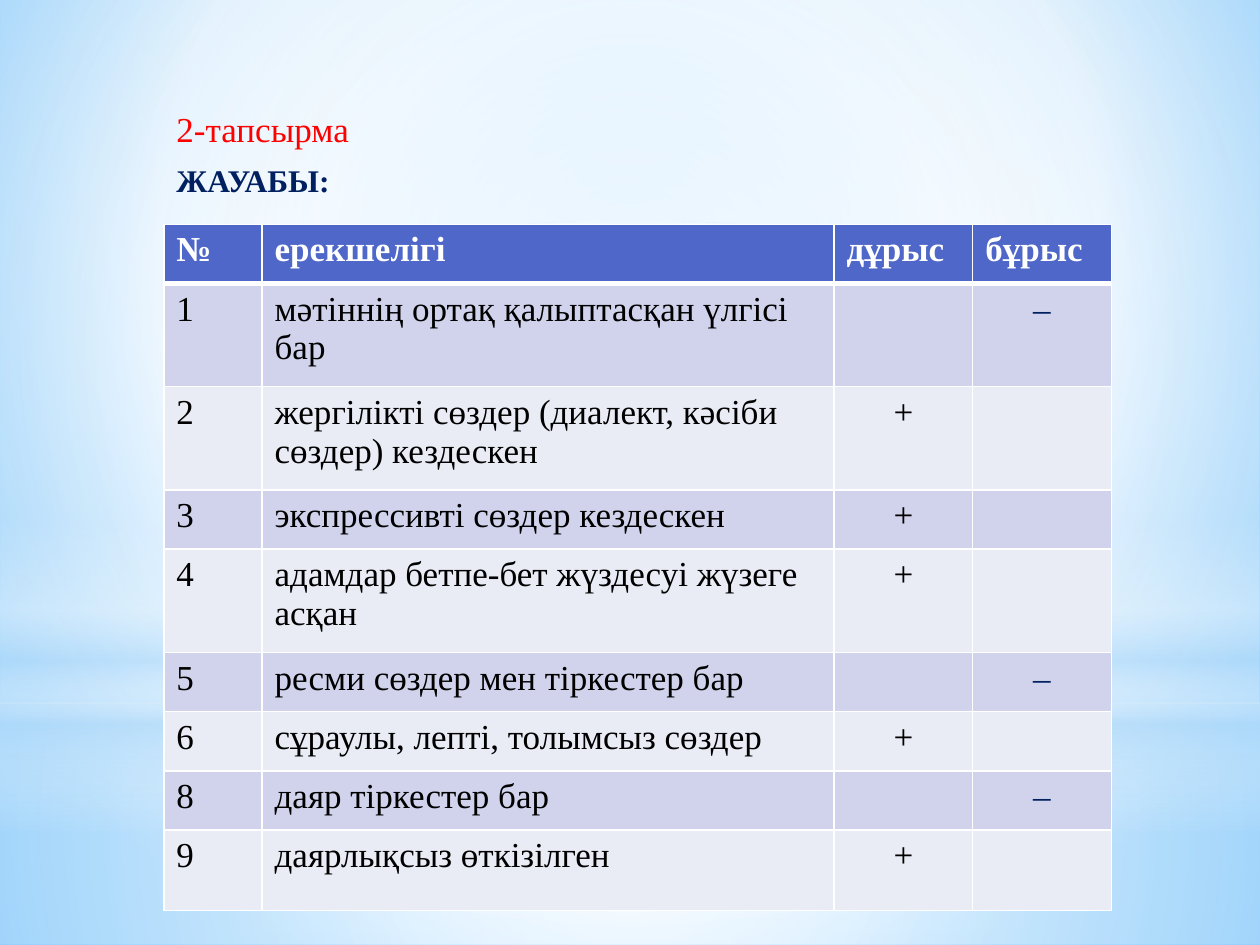
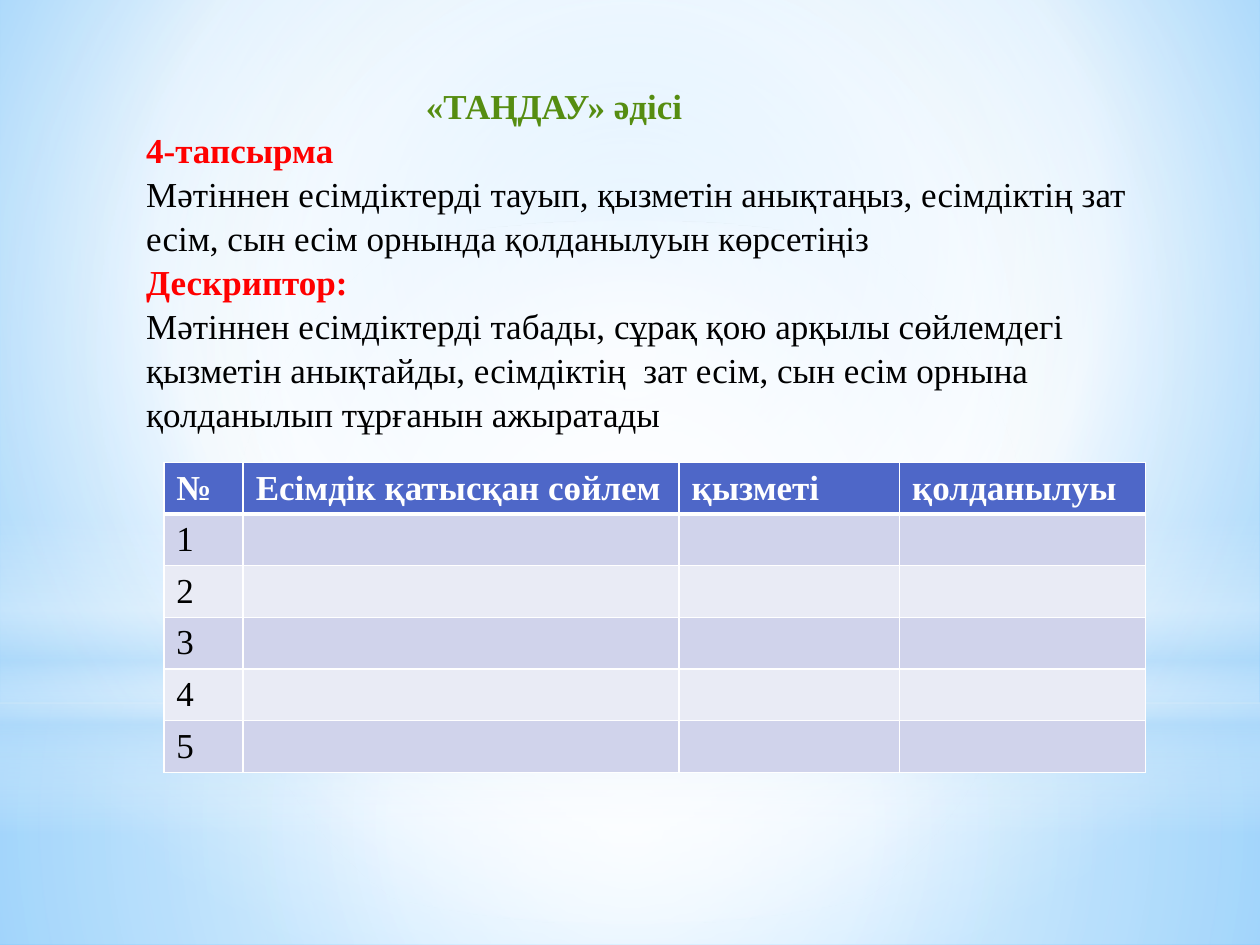
from dataclasses import dataclass

from pptx import Presentation
from pptx.dml.color import RGBColor
from pptx.enum.shapes import MSO_SHAPE
from pptx.enum.text import MSO_ANCHOR, MSO_AUTO_SIZE, PP_ALIGN
from pptx.oxml import parse_xml
from pptx.oxml.ns import nsdecls, qn
from pptx.util import Inches, Pt


@dataclass(frozen=True)
class Theme:
    """Colours, type sizes and gradients shared by the slides."""

    font: str = "Times New Roman"
    size: int = 20
    small: int = 18
    red: str = "FF0000"
    navy: str = "002060"
    green: str = "568D11"
    black: str = "000000"
    white: str = "FFFFFF"
    header: str = "4E67C8"
    bands: tuple = ("D0D3EB", "E9EBF5")
    sky: tuple = ((0, "9ED5FF", 100), (60, "FFFFFF", 100), (100, "5BB9FF", 100))
    ground: tuple = ((0, "FFFFFF", 91), (37, "FFFFFF", 76), (100, "B4DCFA", 79))
    haze: tuple = ((0, "FFFFFF", 89), (48, "FFFFFF", 62), (100, "B4DCFA", 79))
    horizon: tuple = ((0, "FFFFFF", 0), (29, "FFFFFF", 30), (45, "B4DCFA", 40),
                      (55, "FFFFFF", 26), (65, "B4DCFA", 60), (100, "FFFFFF", 0))
    glow: tuple = ((0, "FFFFFF", 100), (56, "FFFFFF", 0))


THEME = Theme()
CENTRE = (50, 50, 50, 50)

ANSWERS = [
    ("№", "ерекшелігі", "дұрыс", "бұрыс"),
    ("1", "мәтіннің ортақ қалыптасқан үлгісі бар", "", "–"),
    ("2", "жергілікті сөздер (диалект, кәсіби сөздер) кездескен", "+", ""),
    ("3", "экспрессивті сөздер кездескен", "+", ""),
    ("4", "адамдар бетпе-бет жүздесуі жүзеге асқан", "+", ""),
    ("5", "ресми сөздер мен тіркестер бар", "", "–"),
    ("6", "сұраулы, лепті, толымсыз сөздер", "+", ""),
    ("8", "даяр тіркестер бар", "", "–"),
    ("9", "даярлықсыз өткізілген", "+", ""),
]
PRONOUNS = [("№", "Есімдік қатысқан сөйлем", "қызметі", "қолданылуы")]
PRONOUNS += [(str(number), "", "", "") for number in range(1, 6)]

TASK = [
    ("«ТАҢДАУ» әдісі", THEME.green, True),
    ("4-тапсырма", THEME.red, True),
    ("Мәтіннен есімдіктерді тауып, қызметін анықтаңыз, есімдіктің зат есім, "
     "сын есім орнында қолданылуын көрсетіңіз", THEME.black, False),
    ("Дескриптор:", THEME.red, True),
    ("Мәтіннен есімдіктерді табады, сұрақ қою арқылы сөйлемдегі қызметін "
     "анықтайды, есімдіктің  зат есім, сын есім орнына қолданылып тұрғанын "
     "ажыратады", THEME.black, False),
]


def apply_gradient(parent, stops, focus=None):
    """Replace the solid fill in parent by a radial or a vertical gradient."""
    colours = "".join(
        f'<a:gs pos="{pos * 1000}"><a:srgbClr val="{colour}">'
        f'<a:alpha val="{alpha * 1000}"/></a:srgbClr></a:gs>'
        for pos, colour, alpha in stops)
    direction = '<a:lin ang="5400000" scaled="0"/>'
    if focus:
        edges = " ".join(f'{side}="{share * 1000}"' for side, share in zip("ltrb", focus))
        direction = f'<a:path path="circle"><a:fillToRect {edges}/></a:path>'
    gradient = parse_xml(f'<a:gradFill {nsdecls("a")} rotWithShape="1">'
                         f'<a:gsLst>{colours}</a:gsLst>{direction}</a:gradFill>')
    parent.replace(parent.find(qn("a:solidFill")), gradient)


def build_backdrop(master, slide):
    """Draw the sky and its light layers and hand them to the master."""
    master.background.fill.solid()
    apply_gradient(master.element.find(f".//{qn('p:bgPr')}"), THEME.sky, (20, 10, 20, 60))
    layers = [
        (MSO_SHAPE.RECTANGLE, 5.58, 1.92, THEME.ground, CENTRE),
        (MSO_SHAPE.RECTANGLE, 0, 5.58, THEME.haze, CENTRE),
        (MSO_SHAPE.RECTANGLE, 4.12, 2.5, THEME.horizon, None),
        (MSO_SHAPE.OVAL, 1.75, 5.58, THEME.glow, CENTRE),
    ]
    for order, (outline, top, height, stops, focus) in enumerate(layers):
        layer = slide.shapes.add_shape(outline, 0, Inches(top), Inches(10), Inches(height))
        layer.shadow.inherit = False
        layer.line.fill.background()
        layer.fill.solid()
        apply_gradient(layer.element.spPr, stops, focus)
        layer.element.nvSpPr.cNvPr.set("id", str(100 + order))
        master.shapes.element.insert(2 + order, layer.element)


def write(paragraph, text, colour, bold=False, size=THEME.size):
    """Add one formatted run to a paragraph."""
    run = paragraph.add_run()
    run.text = text
    run.font.name = THEME.font
    run.font.size = Pt(size)
    run.font.bold = bold
    run.font.color.rgb = RGBColor.from_string(colour)


def place(placeholder, box):
    """Move a placeholder to box and return its top-anchored text frame."""
    placeholder.left, placeholder.top, placeholder.width, placeholder.height = map(Inches, box)
    frame = placeholder.text_frame
    frame.word_wrap = True
    frame.auto_size = MSO_AUTO_SIZE.NONE
    frame.vertical_anchor = MSO_ANCHOR.TOP
    return frame


def next_paragraph(frame, index):
    """Return the first paragraph of the frame or a new one."""
    return frame.add_paragraph() if index else frame.paragraphs[0]


def set_borders(cell, top, bottom):
    """Give a cell white borders of the given top and bottom widths."""
    properties = cell._tc.get_or_add_tcPr()
    for order, (side, width) in enumerate(zip("LRTB", (1, 1, top, bottom))):
        properties.insert(order, parse_xml(
            f'<a:ln{side} {nsdecls("a")} w="{Pt(width)}"><a:solidFill>'
            f'<a:srgbClr val="{THEME.white}"/></a:solidFill></a:ln{side}>'))


def build_table(slide, left, top, widths, heights, rows):
    """Draw a banded table with a header row."""
    table = slide.shapes.add_table(
        len(rows), len(widths), Inches(left), Inches(top),
        Inches(sum(widths)), Inches(sum(heights))).table
    for column, width in zip(table.columns, widths):
        column.width = Inches(width)
    for index, (row, height, texts) in enumerate(zip(table.rows, heights, rows)):
        row.height = Inches(height)
        is_header = index == 0
        band = THEME.header if is_header else THEME.bands[(index - 1) % 2]
        for cell, text in zip(row.cells, texts):
            cell.fill.solid()
            cell.fill.fore_color.rgb = RGBColor.from_string(band)
            set_borders(cell, 3 if index == 1 else 1, 3 if is_header else 1)
            if not text:
                continue
            paragraph = cell.text_frame.paragraphs[0]
            if text in "+–":
                paragraph.alignment = PP_ALIGN.CENTER
            body_colour = THEME.navy if text == "–" else THEME.black
            write(paragraph, text, THEME.white if is_header else body_colour, is_header)


def build_answers(slide):
    """Fill the slide with the answers to the second task."""
    title = slide.shapes.title.element
    title.getparent().remove(title)
    frame = place(slide.placeholders[1], (1.25, 0.8, 7, 0.95))
    lines = [("2-тапсырма", THEME.red, False, THEME.size),
             ("ЖАУАБЫ:", THEME.navy, True, THEME.small)]
    for index, line in enumerate(lines):
        paragraph = next_paragraph(frame, index)
        paragraph.space_before, paragraph.space_after = Pt(4), Pt(3)
        properties = paragraph._p.get_or_add_pPr()
        properties.set("marL", str(Inches(0.05)))
        properties.set("indent", "0")
        properties.append(parse_xml(f'<a:buNone {nsdecls("a")}/>'))
        write(paragraph, *line)
    heights = [0.47, 0.82, 0.82, 0.47, 0.82, 0.47, 0.47, 0.47, 0.64]
    build_table(slide, 1.3, 1.78, [0.78, 4.54, 1.1, 1.1], heights, ANSWERS)


def build_task(slide):
    """Fill the slide with the fourth task and its empty table."""
    frame = place(slide.shapes.title, (1.06, 0.6, 8.43, 2.8))
    for index, line in enumerate(TASK):
        paragraph = next_paragraph(frame, index)
        paragraph.alignment = PP_ALIGN.LEFT
        paragraph.line_spacing = 1.05
        if index == 0:
            paragraph._p.get_or_add_pPr().set("indent", str(Inches(2.22)))
        write(paragraph, *line)
    build_table(slide, 1.3, 3.67, [0.63, 3.46, 1.75, 1.95], [0.41] * len(PRONOUNS), PRONOUNS)


def main():
    """Build and save the presentation."""
    deck = Presentation()
    deck.slide_width, deck.slide_height = Inches(10), Inches(7.5)
    answers = deck.slides.add_slide(deck.slide_layouts[1])
    task = deck.slides.add_slide(deck.slide_layouts[5])
    build_backdrop(deck.slide_master, answers)
    build_answers(answers)
    build_task(task)
    deck.save("out.pptx")


if __name__ == "__main__":
    main()
